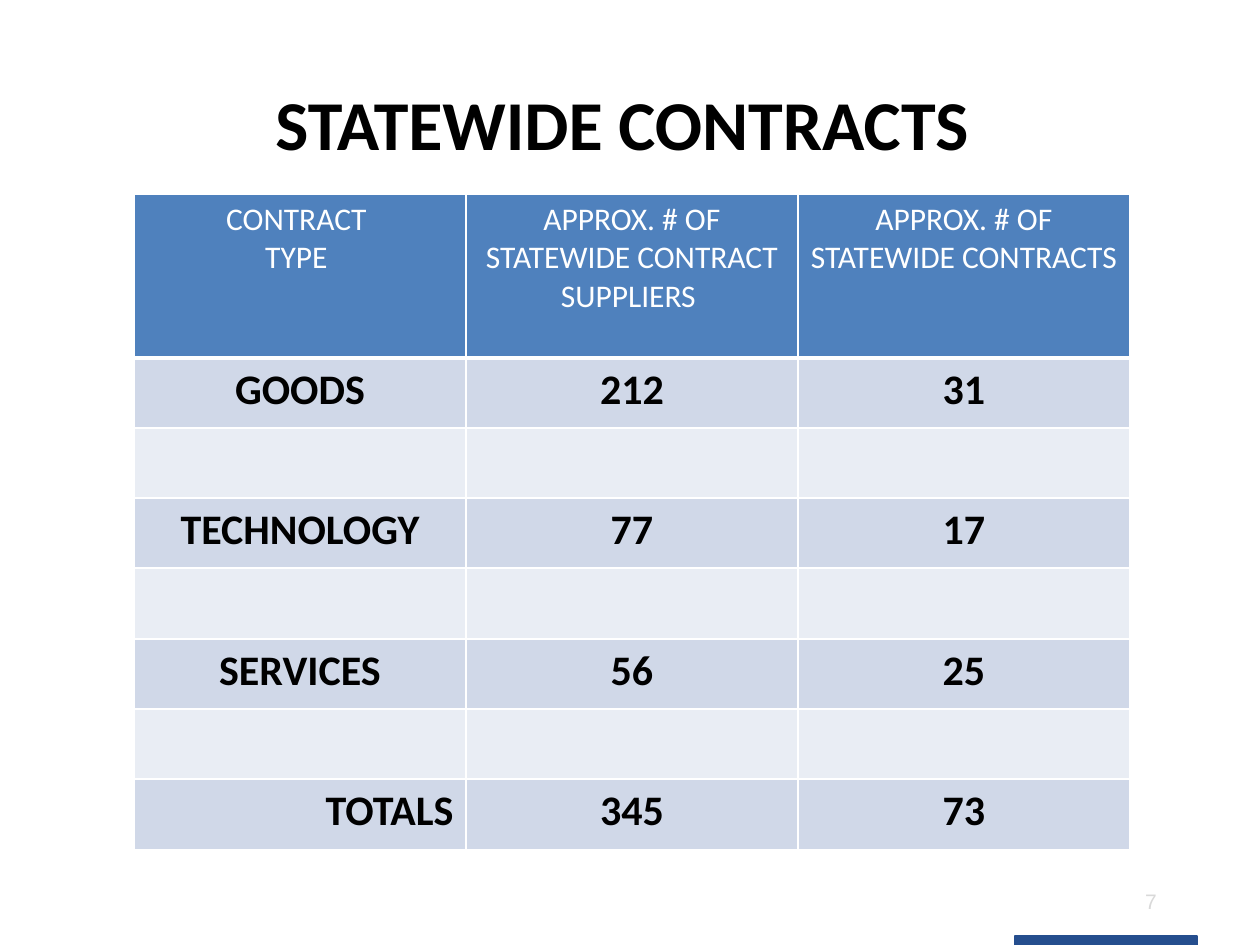
from lxml import etree
from pptx import Presentation
from pptx import util as u
from pptx.dml.color import RGBColor
from pptx.enum import shapes, text
from pptx.oxml.ns import qn

PX = 914400 // 126
COLORS = {
    "header": "4F81BD", "band": "D0D8E8", "gap": "E9EDF4", "bar": "254E8E",
    "white": "FFFFFF", "black": "000000", "number": "D9D9D9",
}
CENTER, RIGHT = text.PP_ALIGN.CENTER, text.PP_ALIGN.RIGHT


def px(n):
    return u.Emu(n * PX)


def rgb(name):
    return RGBColor.from_string(COLORS[name])


def write(tf, content, size=24, color="black", bold=False, font="Calibri",
          align=CENTER, spacing=None):
    """Write one paragraph per line of content."""
    tf.word_wrap = True
    for i, line in enumerate(content.split("\n")):
        p = tf.add_paragraph() if i else tf.paragraphs[0]
        p.alignment = align
        if spacing:
            p.line_spacing = spacing
        r = p.add_run()
        r.text = line
        r.font.name, r.font.size, r.font.bold = font, u.Pt(size), bold
        r.font.color.rgb = rgb(color)


def border(cell, bottom):
    """White cell borders; the bottom one has its own width in points."""
    tc_pr = cell._tc.get_or_add_tcPr()
    for i, (side, width) in enumerate(
            (("lnL", 1), ("lnR", 1), ("lnT", 1), ("lnB", bottom))):
        ln = etree.Element(qn(f"a:{side}"), w=str(u.Pt(width)))
        fill = etree.SubElement(ln, qn("a:solidFill"))
        etree.SubElement(fill, qn("a:srgbClr"), val=COLORS["white"])
        tc_pr.insert(i, ln)


class Deck:
    def __init__(self, width, height):
        self.prs = Presentation()
        self.prs.slide_width, self.prs.slide_height = px(width), px(height)
        self.s = self.prs.slides.add_slide(self.prs.slide_layouts[6])

    def label(self, x, y, w, h, content, **style):
        tf = self.s.shapes.add_textbox(px(x), px(y), px(w), px(h)).text_frame
        tf.vertical_anchor = text.MSO_ANCHOR.MIDDLE
        write(tf, content, **style)

    def bar(self, x, y, w, h, color):
        sp = self.s.shapes.add_shape(
            shapes.MSO_SHAPE.RECTANGLE, px(x), px(y), px(w), px(h))
        sp.shadow.inherit = False
        sp.fill.solid()
        sp.fill.fore_color.rgb = sp.line.color.rgb = rgb(color)
        sp.line.width = u.Pt(0.75)

    def table(self, x, y, col_width, heights, rows):
        n_cols = len(rows[0])
        table = self.s.shapes.add_table(
            len(rows), n_cols, px(x), px(y),
            px(col_width * n_cols), px(sum(heights))).table
        for col in table.columns:
            col.width = px(col_width)
        for i, (values, height) in enumerate(zip(rows, heights)):
            table.rows[i].height = px(height)
            fill = "header" if i == 0 else "band" if i % 2 else "gap"
            for j, value in enumerate(values):
                cell = table.cell(i, j)
                cell.fill.solid()
                cell.fill.fore_color.rgb = rgb(fill)
                border(cell, bottom=1 if i else 3)
                if i == 0:
                    write(cell.text_frame, value, size=18, color="white")
                elif value:
                    write(cell.text_frame, value, bold=True,
                          align=RIGHT if value == "TOTALS" else CENTER)


def main():
    deck = Deck(1260, 945)

    # Footer
    deck.bar(1015, 936, 182, 9, "bar")
    deck.label(1129, 876, 44, 50, "7", size=12, color="number", font="Arial")

    # Contract counts, with an empty row between the groups
    blank = ("", "", "")
    rows = [
        ("CONTRACT \nTYPE ",
         "APPROX. # OF STATEWIDE CONTRACT SUPPLIERS ",
         "APPROX. # OF STATEWIDE CONTRACTS"),
        ("GOODS", "212", "31"), blank,
        ("TECHNOLOGY", "77", "17"), blank,
        ("SERVICES", "56", "25"), blank,
        ("TOTALS", "345", "73"),
    ]
    n_body, body_height = len(rows) - 1, 492
    edges = [body_height * i // n_body for i in range(n_body + 1)]
    heights = [164] + [b - a for a, b in zip(edges, edges[1:])]
    deck.table(134, 194, 332, heights, rows)

    # Title
    deck.label(63, 49, 1134, 158, "STATEWIDE CONTRACTS ",
               size=40, bold=True, spacing=0.9)

    deck.prs.save("out.pptx")


if __name__ == "__main__":
    main()
